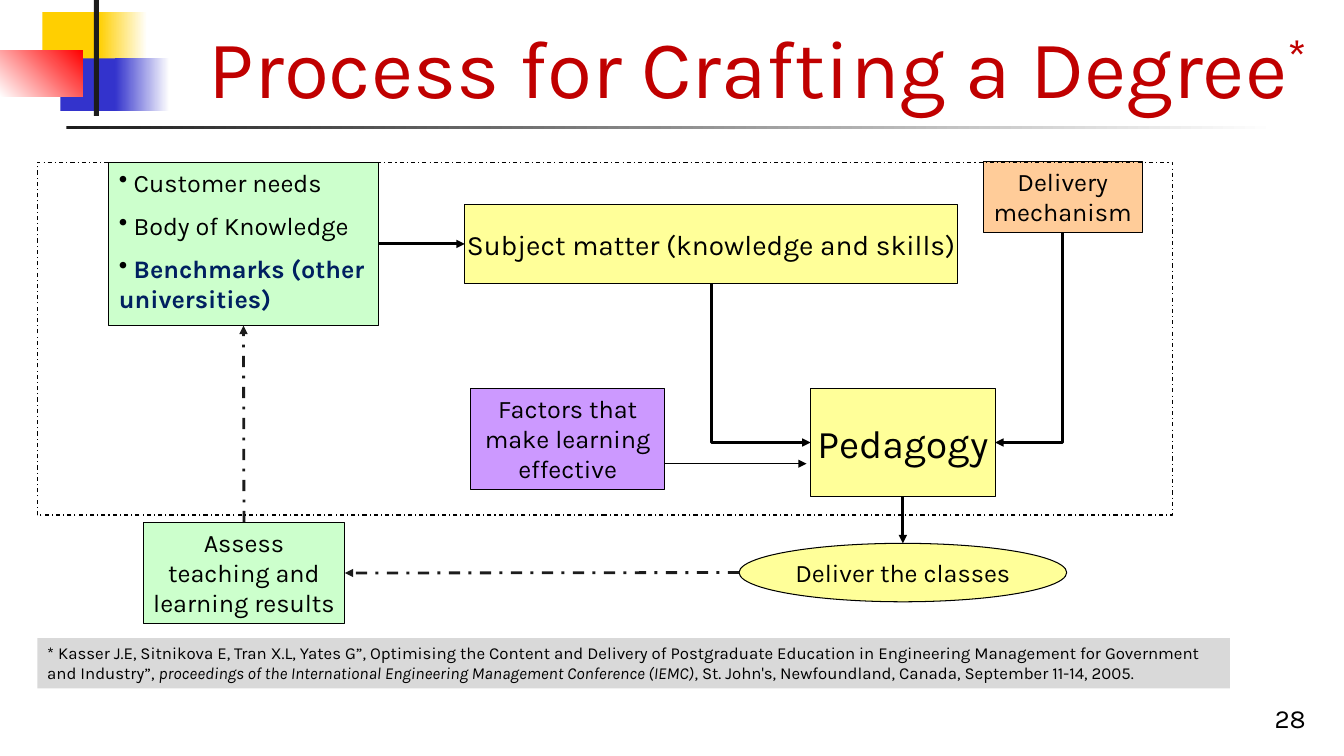
from lxml.etree import SubElement
from pptx import Presentation
from pptx.dml.color import RGBColor
from pptx.enum.dml import MSO_LINE
from pptx.enum.shapes import MSO_CONNECTOR, MSO_SHAPE
from pptx.enum.text import MSO_ANCHOR, MSO_AUTO_SIZE, PP_ALIGN
from pptx.oxml.ns import qn
from pptx.util import Inches, Pt

FONT = "Karla"
BLACK = RGBColor(0x00, 0x00, 0x00)
WHITE = RGBColor(0xFF, 0xFF, 0xFF)
CHARCOAL = RGBColor(0x1C, 0x1C, 0x1C)
GOLD = RGBColor(0xFF, 0xCF, 0x01)
BLUE = RGBColor(0x33, 0x33, 0xCC)
RED = RGBColor(0xFF, 0x00, 0x00)
CRIMSON = RGBColor(0xC0, 0x00, 0x00)
NAVY = RGBColor(0x00, 0x20, 0x60)
GREEN = RGBColor(0xCC, 0xFF, 0xCC)
YELLOW = RGBColor(0xFF, 0xFF, 0x99)
ORANGE = RGBColor(0xFF, 0xCC, 0x99)
PURPLE = RGBColor(0xCC, 0x99, 0xFF)
GREY = RGBColor(0xD9, 0xD9, 0xD9)

TOP, LEFT, BOTTOM, RIGHT = range(4)


def add_block(page, box, fill=None, outline=None, kind=MSO_SHAPE.RECTANGLE):
    block = page.shapes.add_shape(kind, *map(Inches, box))
    block.shadow.inherit = False
    if fill is None:
        block.fill.background()
    else:
        block.fill.solid()
        block.fill.fore_color.rgb = fill
    if outline is None:
        block.line.fill.background()
    else:
        block.line.color.rgb = outline
        block.line.width = Pt(0.75)
    return block


def add_fade(page, box, start, end, angle=0):
    block = add_block(page, box)
    block.fill.gradient()
    block.fill.gradient_angle = angle
    for stop, color, position in zip(block.fill.gradient_stops, (start, end), (0, 1)):
        stop.color.rgb = color
        stop.position = position


def style_para(para, size, align=PP_ALIGN.LEFT, color=BLACK):
    para.alignment = align
    para.font.name = FONT
    para.font.size = Pt(size)
    para.font.color.rgb = color


def add_span(para, text):
    span = para.add_run()
    span.text = text
    return span


def add_node(page, box, fill, text, size=18, wrap=True, kind=MSO_SHAPE.RECTANGLE):
    node = add_block(page, box, fill, BLACK, kind)
    frame = node.text_frame
    frame.word_wrap = wrap
    frame.vertical_anchor = MSO_ANCHOR.TOP if wrap else MSO_ANCHOR.MIDDLE
    frame.text = text
    style_para(frame.paragraphs[0], size, PP_ALIGN.CENTER)
    return node


def add_needs(page, box):
    node = add_block(page, box, GREEN, BLACK)
    frame = node.text_frame
    frame.word_wrap = True
    frame.vertical_anchor = MSO_ANCHOR.TOP
    frame.text = " Customer needs\n Body of Knowledge\n "
    benchmarks = add_span(frame.paragraphs[-1], "Benchmarks (other universities)")
    for index, para in enumerate(frame.paragraphs):
        style_para(para, 18)
        para.space_before = Pt(9 if index else 0)
        properties = para._p.get_or_add_pPr()
        bullet = properties.makeelement(qn("a:buChar"), {"char": "•"})
        properties.insert_element_before(bullet, "a:tabLst", "a:defRPr", "a:extLst")
    benchmarks.font.bold = True
    benchmarks.font.color.rgb = NAVY
    return node


def side_point(node, side):
    middle_x, middle_y = node.left + node.width // 2, node.top + node.height // 2
    return {
        TOP: (middle_x, node.top),
        LEFT: (node.left, middle_y),
        BOTTOM: (middle_x, node.top + node.height),
        RIGHT: (node.left + node.width, middle_y),
    }[side]


def add_arrow(page, start, end, color=BLACK, width=2, dash=None, kind=MSO_CONNECTOR.STRAIGHT):
    arrow = page.shapes.add_connector(kind, *start, *end)
    arrow.line.color.rgb = color
    arrow.line.width = Pt(width)
    if dash is not None:
        arrow.line.dash_style = dash
    SubElement(arrow.line._get_or_add_ln(), qn("a:tailEnd"), type="triangle")
    SubElement(arrow._element.spPr, qn("a:effectLst"))
    return arrow


def glue(arrow, source, source_side, target, target_side):
    for connect, node, side in (
        (arrow.begin_connect, source, source_side),
        (arrow.end_connect, target, target_side),
    ):
        round_node = node.auto_shape_type == MSO_SHAPE.OVAL
        connect(node, side * 2 if round_node else side)


def link(page, source, source_side, target, target_side, **style):
    start, end = side_point(source, source_side), side_point(target, target_side)
    arrow = add_arrow(page, start, end, **style)
    glue(arrow, source, source_side, target, target_side)
    arrow.begin_x, arrow.begin_y = start
    arrow.end_x, arrow.end_y = end


def link_down_and_across(page, source, target, target_side):
    start, end = side_point(source, BOTTOM), side_point(target, target_side)
    arrow = add_arrow(page, start, end, kind=MSO_CONNECTOR.ELBOW)
    glue(arrow, source, BOTTOM, target, target_side)
    across, down = abs(end[0] - start[0]), end[1] - start[1]
    arrow.width, arrow.height = down, across
    arrow.left = (start[0] + end[0] - down) // 2
    arrow.top = (start[1] + end[1] - across) // 2
    arrow._element.spPr.find(qn("a:prstGeom")).set("prst", "bentConnector2")
    transform = arrow._element.spPr.find(qn("a:xfrm"))
    rightward = end[0] > start[0]
    transform.set("rot", str((270 if rightward else 90) * 60000))
    transform.set("flipH", "1" if rightward else "0")


def add_ornament(page, left, top):
    add_block(page, (left + 0.42, top + 0.12, 0.64, 0.52), GOLD)
    add_fade(page, (left + 0.98, top + 0.12, 0.48, 0.52), GOLD, WHITE)
    add_block(page, (left + 0.6, top + 0.58, 0.62, 0.52), BLUE)
    add_fade(page, (left + 1.14, top + 0.58, 0.54, 0.52), BLUE, WHITE)
    add_fade(page, (left, top + 0.5, 0.82, 0.46), WHITE, RED, 45)
    add_block(page, (left + 0.93, top, 0.05, 1.15), CHARCOAL)
    add_fade(page, (left + 0.66, top + 1.25, 12, 0.03), CHARCOAL, WHITE)


def add_title(page, box):
    title = page.shapes.title
    title.left, title.top, title.width, title.height = map(Inches, box)
    frame = title.text_frame
    frame.auto_size = MSO_AUTO_SIZE.NONE
    frame.vertical_anchor = MSO_ANCHOR.BOTTOM
    frame.text = "Process for Crafting a Degree"
    para = frame.paragraphs[0]
    style_para(para, 58.7, PP_ALIGN.CENTER, CRIMSON)
    add_span(para, "*")._r.get_or_add_rPr().set("baseline", "30000")


def add_process(page, box):
    left, top = box[:2]

    def place(x, y, width, height):
        return left + x, top + y, width, height

    needs = add_needs(page, place(0.71, 0, 2.67, 1.62))
    subject = add_node(page, place(4.24, 0.42, 4.89, 0.78), YELLOW,
                       "Subject matter (knowledge and skills)", 20, False)
    delivery = add_node(page, place(9.38, -0.01, 1.58, 0.71), ORANGE, "Delivery mechanism")
    pedagogy = add_node(page, place(7.67, 2.24, 1.83, 1.08), YELLOW, "Pedagogy", 28, False)
    classes = add_node(page, place(6.96, 3.78, 3.25, 0.58), YELLOW,
                       "Deliver the classes", 18, False, MSO_SHAPE.OVAL)
    assess = add_node(page, place(1.05, 3.57, 2, 1.01), GREEN,
                      "Assess teaching and learning results")
    link(page, needs, RIGHT, subject, LEFT)
    link_down_and_across(page, subject, pedagogy, LEFT)
    link_down_and_across(page, delivery, pedagogy, RIGHT)
    link(page, pedagogy, BOTTOM, classes, TOP)
    feedback = {"color": CHARCOAL, "dash": MSO_LINE.DASH_DOT}
    link(page, classes, LEFT, assess, RIGHT, **feedback)
    link(page, assess, TOP, needs, BOTTOM, **feedback)
    boundary = add_block(page, box, None, BLACK)
    boundary.line.dash_style = MSO_LINE.DASH_DOT
    add_node(page, place(4.3, 2.24, 1.92, 1.01), PURPLE, "Factors that make learning effective")
    factors_y = Inches(top + 2.99)
    add_arrow(page, (Inches(left + 6.22), factors_y), (Inches(left + 7.63), factors_y), width=0.75)


def add_citation(page, box):
    frame = add_block(page, box, GREY).text_frame
    frame.word_wrap = True
    frame.vertical_anchor = MSO_ANCHOR.TOP
    para = frame.paragraphs[0]
    style_para(para, 12)
    add_span(para, "* Kasser J.E, Sitnikova E, Tran X.L, Yates G”, Optimising the Content and Delivery of "
                   "Postgraduate Education in Engineering Management for Government and Industry”, ")
    proceedings = "proceedings of the International Engineering Management Conference (IEMC)"
    add_span(para, proceedings).font.italic = True
    add_span(para, ", St. John's, Newfoundland, Canada, September 11-14, 2005.")


def add_page_number(page, box):
    frame = page.shapes.add_textbox(*map(Inches, box)).text_frame
    frame.word_wrap = True
    frame.vertical_anchor = MSO_ANCHOR.BOTTOM
    frame.text = "28"
    style_para(frame.paragraphs[0], 18.7, PP_ALIGN.RIGHT)


def main():
    deck = Presentation()
    deck.slide_width, deck.slide_height = Inches(13.33), Inches(7.5)
    page = deck.slides.add_slide(deck.slide_layouts[5])
    add_ornament(page, 0, 0)
    add_title(page, (1.89, 0.27, 11.26, 0.92))
    add_process(page, (0.37, 1.61, 11.26, 3.5))
    add_citation(page, (0.37, 6.33, 11.83, 0.5))
    add_page_number(page, (10.27, 6.83, 2.78, 0.5))
    deck.save("out.pptx")


if __name__ == "__main__":
    main()
